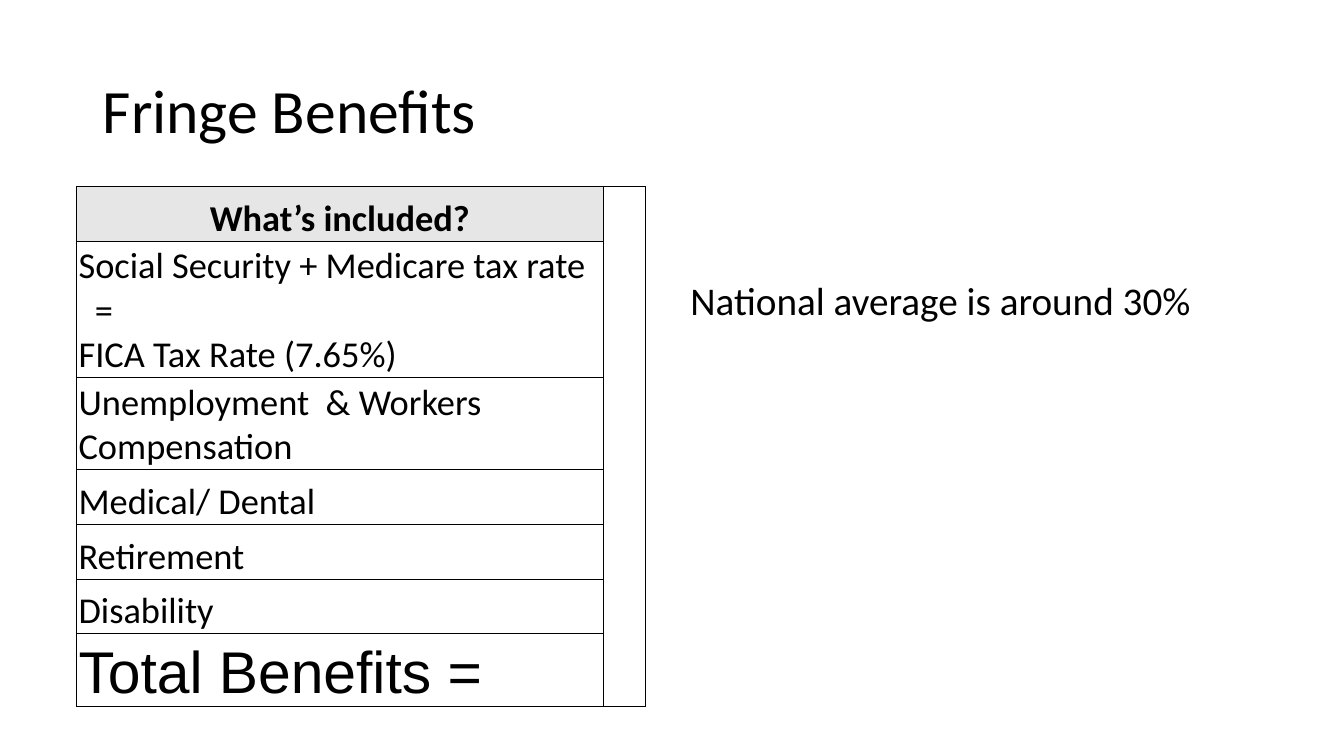
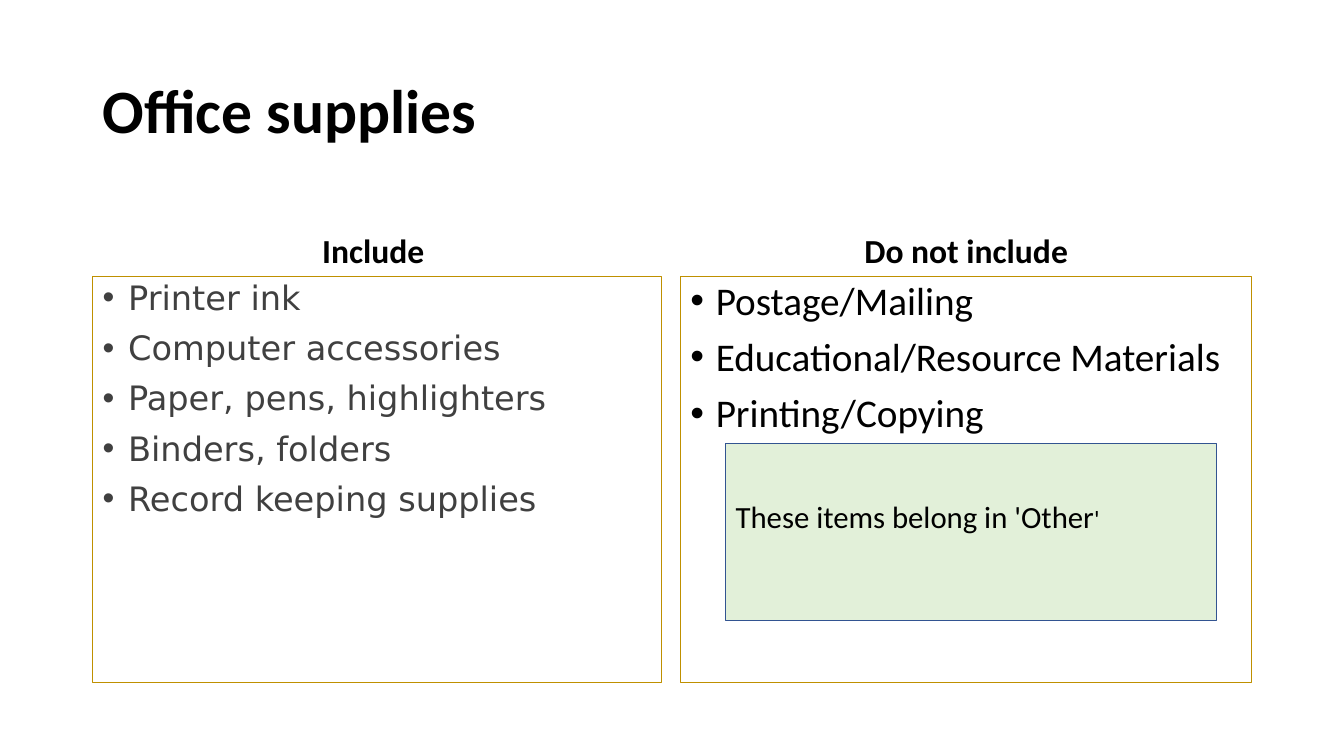
from lxml import etree
from pptx import Presentation
from pptx.dml.color import RGBColor
from pptx.enum.shapes import MSO_SHAPE as Shape
from pptx.enum.text import MSO_ANCHOR as Anchor, PP_ALIGN as Align
from pptx.oxml.ns import qn
from pptx.util import Cm, Pt

BLACK = RGBColor(0x00, 0x00, 0x00)
DARK_GRAY = RGBColor(0x40, 0x40, 0x40)
LIGHT_GRAY = RGBColor(0xE7, 0xE6, 0xE6)
GOLD = RGBColor(0xBF, 0x90, 0x00)
BLUE = RGBColor(0x32, 0x54, 0x91)
PALE_GREEN = RGBColor(0xE2, 0xF0, 0xD9)

# Shared layout, in centimetres
LEFT, RIGHT = 2.34, 17.15
LEFT_W, RIGHT_W = 14.33, 14.4
HEAD_TOP, HEAD_H = 4.67, 2.29
BODY_TOP, BODY_H = 6.96, 10.24


class Deck:
    """Holds the presentation, its text style and the current slide."""

    font = "Calibri"
    bullet_indent = Cm(0.64)

    def __init__(self):
        self.prs = Presentation()
        self.prs.slide_width, self.prs.slide_height = Cm(33.87), Cm(19.05)
        self.s = None

    def slide(self, title, bold=False):
        self.s = self.prs.slides.add_slide(self.prs.slide_layouts[6])
        tf = self.text_box(LEFT, 1.02, 29.21, 3.68, Anchor.MIDDLE)
        self.body_line(tf.paragraphs[0], title, 44, bold=bold, before=0)

    def run(self, p, text, size, color=BLACK, bold=False, font=None):
        r = p.add_run()
        r.text = text
        r.font.size, r.font.bold = Pt(size), bold
        r.font.name = font or self.font
        r.font.color.rgb = color

    def body_line(self, p, text, size, before=10, align=Align.LEFT, **style):
        p.line_spacing, p.space_before, p.alignment = 0.9, Pt(before), align
        self.run(p, text, size, **style)

    def indent(self, p, left, first=0):
        pPr = p._p.get_or_add_pPr()
        pPr.set("marL", str(left))
        pPr.set("indent", str(first))
        return pPr

    def text_box(self, x, y, w, h, anchor=Anchor.TOP):
        tf = self.s.shapes.add_textbox(Cm(x), Cm(y), Cm(w), Cm(h)).text_frame
        tf.word_wrap, tf.vertical_anchor = True, anchor
        return tf

    def heading(self, x, w, text):
        tf = self.text_box(x, HEAD_TOP, w, HEAD_H, Anchor.BOTTOM)
        self.body_line(tf.paragraphs[0], text, 24, align=Align.CENTER, bold=True)

    def note(self, x, w, text):
        tf = self.text_box(x, BODY_TOP, w, BODY_H)
        self.body_line(tf.paragraphs[0], text, 28)

    def rect(self, x, y, w, h, line, width, fill=None, anchor=Anchor.TOP):
        sp = self.s.shapes.add_shape(Shape.RECTANGLE, Cm(x), Cm(y), Cm(w), Cm(h))
        sp.shadow.inherit = False
        if fill is None:
            sp.fill.background()
        else:
            sp.fill.solid()
            sp.fill.fore_color.rgb = fill
        sp.line.color.rgb, sp.line.width = line, Pt(width)
        tf = sp.text_frame
        tf.word_wrap, tf.vertical_anchor = True, anchor
        return tf

    def bullet_box(self, x, w, items, size, **style):
        tf = self.rect(x, BODY_TOP, w, BODY_H, GOLD, 0.75)
        for i, item in enumerate(items):
            p = tf.add_paragraph() if i else tf.paragraphs[0]
            self.body_line(p, item, size, **style)
            pPr = self.indent(p, self.bullet_indent, -self.bullet_indent)
            etree.SubElement(pPr, qn("a:buFont"), typeface="Arial")
            etree.SubElement(pPr, qn("a:buChar"), char="•")

    def callout(self, x, y, w, h, runs):
        tf = self.rect(x, y, w, h, BLUE, 1, PALE_GREEN, Anchor.MIDDLE)
        tf.margin_bottom = Cm(0.9)
        p = tf.paragraphs[0]
        p.alignment = Align.LEFT
        for text, size in runs:
            self.run(p, text, size)

    def borders(self, cell):
        tcPr = cell._tc.get_or_add_tcPr()
        for i, side in enumerate(("lnL", "lnR", "lnT", "lnB")):
            ln = etree.Element(qn(f"a:{side}"), w=str(Pt(0.5)))
            fill = etree.SubElement(ln, qn("a:solidFill"))
            etree.SubElement(fill, qn("a:srgbClr"), val=str(BLACK))
            tcPr.insert(i, ln)

    def table(self, x, y, widths, heights):
        """Add a plain bordered table."""
        frame = self.s.shapes.add_table(len(heights), len(widths), Cm(x), Cm(y),
                                        Cm(sum(widths)), Cm(sum(heights)))
        table = frame.table
        for col, w in zip(table.columns, widths):
            col.width = Cm(w)
        for row, h in zip(table.rows, heights):
            row.height = Cm(h)
        for cell in table.iter_cells():
            cell.fill.background()
            cell.vertical_anchor = Anchor.BOTTOM
            cell.margin_left = cell.margin_right = cell.margin_top = Cm(0.05)
            cell.margin_bottom = 0
            self.borders(cell)
        return table

    def cell_lines(self, cell, lines, size=26, align=Align.LEFT, **style):
        tf = cell.text_frame
        for i, text in enumerate(lines):
            p = tf.add_paragraph() if i else tf.paragraphs[0]
            p.alignment = align
            self.run(p, text, size, **style)


def fringe_benefits(deck):
    deck.slide("Fringe Benefits")
    benefits = [
        ["Social Security + Medicare tax rate", "=", "FICA Tax Rate (7.65%)"],
        ["Unemployment  & Workers Compensation"],
        ["Medical/ Dental"],
        ["Retirement"],
        ["Disability"],
    ]
    table = deck.table(1.93, 4.7, [13.28, 1.04],
                       [1.38, 3.43, 2.32] + [1.38] * 3 + [1.74])
    table.cell(0, 1).merge(table.cell(6, 1))
    header = table.cell(0, 0)
    header.fill.solid()
    header.fill.fore_color.rgb = LIGHT_GRAY
    deck.cell_lines(header, ["What’s included?"], align=Align.CENTER, bold=True)
    for row, lines in enumerate(benefits, 1):
        deck.cell_lines(table.cell(row, 0), lines)
    deck.indent(table.cell(1, 0).text_frame.paragraphs[1], Cm(0.41))
    deck.cell_lines(table.cell(6, 0), ["Total Benefits ="], 42, font="Arial")
    deck.note(RIGHT, RIGHT_W, "National average is around 30%")


def office_supplies(deck):
    deck.slide("Office supplies", bold=True)
    deck.heading(LEFT, LEFT_W, "Include ")
    deck.bullet_box(LEFT, LEFT_W,
                    ["Printer ink", "Computer accessories",
                     "Paper, pens, highlighters", "Binders, folders",
                     "Record keeping supplies"],
                    24, color=DARK_GRAY, font="DejaVu Sans")
    deck.heading(RIGHT, RIGHT_W, "Do not include")
    deck.bullet_box(RIGHT, RIGHT_W,
                    ["Postage/Mailing", "Educational/Resource Materials",
                     "Printing/Copying"], 28)
    deck.callout(18.29, 11.18, 12.37, 4.45,
                 [("These items belong in 'Other", 22), ("'", 18)])


def main():
    deck = Deck()
    fringe_benefits(deck)
    office_supplies(deck)
    deck.prs.save("out.pptx")


if __name__ == "__main__":
    main()
